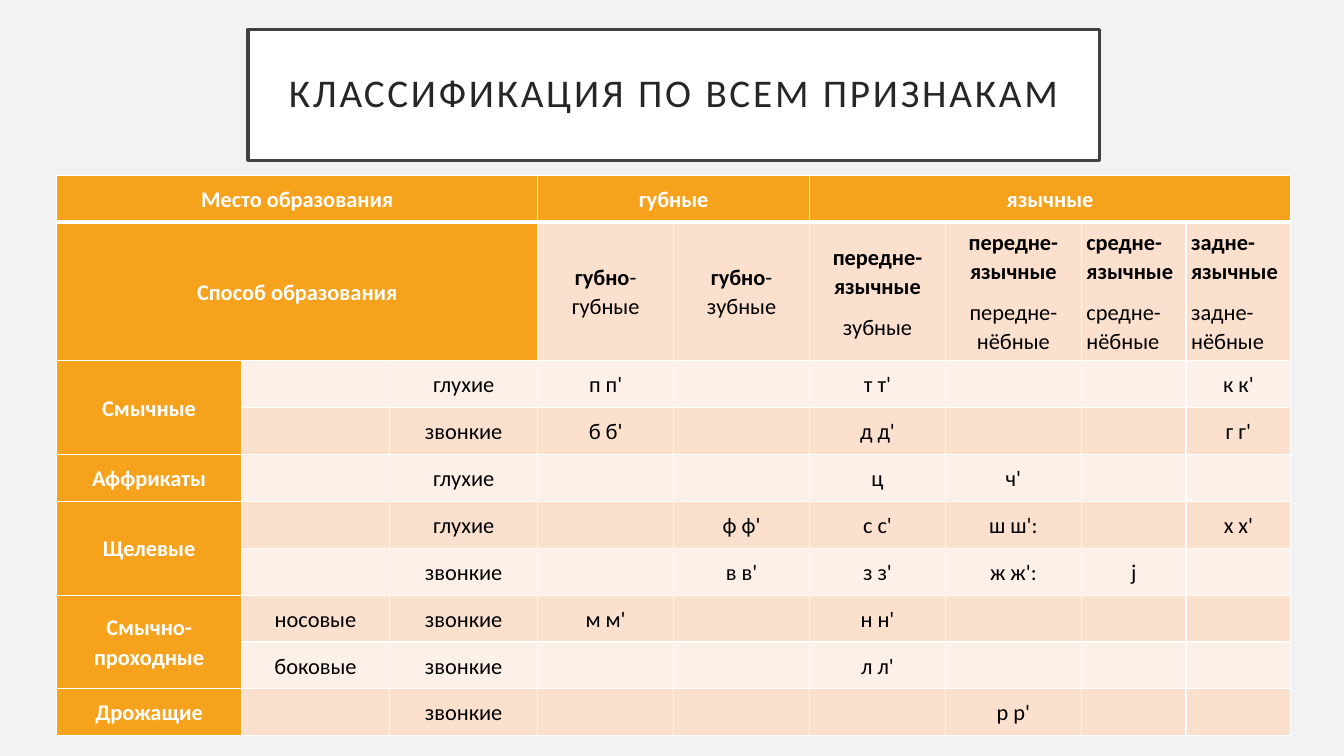
from dataclasses import dataclass
from typing import Any

from lxml.etree import SubElement
from pptx import Presentation
from pptx.dml.color import RGBColor
from pptx.enum.text import MSO_ANCHOR, MSO_AUTO_SIZE, PP_ALIGN
from pptx.oxml.ns import qn
from pptx.slide import Slide
from pptx.table import Table, _Cell
from pptx.util import Pt


@dataclass(frozen=True)
class Theme:
    font: str = "Calibri"
    title_size: float = 28
    cell_size: float = 16
    page: str = "F2F2F2"
    white: str = "FFFFFF"
    frame: str = "404040"
    title: str = "262626"
    text: str = "000000"
    accent: str = "F6A21D"
    bands: tuple[str, str] = ("FDF0E8", "FBE0CD")


@dataclass(frozen=True)
class Span:
    text: str
    bold: bool = False


@dataclass(frozen=True)
class Heading:
    row: int
    column: int
    text: str
    rows: int = 1
    columns: int = 1


@dataclass(frozen=True)
class Place:
    paragraphs: tuple[tuple[Span, ...], ...]
    align: PP_ALIGN = PP_ALIGN.CENTER


THEME = Theme()
COLUMN_WIDTHS = [132] + [105.8] * 2 + [97.1] * 4 + [74.8] * 2
ROW_HEIGHTS = [33.4, 90] + [33.5] * 8
FIRST_PLACE_COLUMN = 3
FIRST_SOUND_ROW = 2

HEADINGS = [
    Heading(0, 0, "Место образования", columns=3),
    Heading(0, 3, "губные", columns=2),
    Heading(0, 5, "язычные", columns=4),
    Heading(1, 0, "Способ образования", columns=3),
    Heading(2, 0, "Смычные", rows=2),
    Heading(4, 0, "Аффрикаты"),
    Heading(5, 0, "Щелевые", rows=2),
    Heading(7, 0, "Смычно-проходные", rows=2),
    Heading(9, 0, "Дрожащие"),
]


def stacked(group: str, detail: str, align: PP_ALIGN = PP_ALIGN.CENTER) -> Place:
    return Place(((Span(group, True),), (Span(detail),)), align)


PLACES = [
    Place(((Span("губно", True), Span("-губные")),)),
    Place(((Span("губно", True), Span("-зубные")),)),
    stacked("передне-язычные", "зубные"),
    stacked("передне-язычные", "передне-нёбные"),
    stacked("средне-язычные", "средне-нёбные", PP_ALIGN.LEFT),
    stacked("задне-язычные", "задне-нёбные", PP_ALIGN.LEFT),
]

SOUNDS = [
    ("", "глухие", "п п'", "", "т т'", "", "", "к к'"),
    ("", "звонкие", "б б'", "", "д д'", "", "", "г г'"),
    ("", "глухие", "", "", "ц", "ч'", "", ""),
    ("", "глухие", "", "ф ф'", "с с'", "ш ш':", "", "х х'"),
    ("", "звонкие", "", "в в'", "з з'", "ж ж':", "j", ""),
    ("носовые", "звонкие", "м м'", "", "н н'", "", "", ""),
    ("боковые", "звонкие", "", "", "л л'", "", "", ""),
    ("", "звонкие", "", "", "", "р р'", "", ""),
]


def apply(target: Any, **values: Any) -> None:
    for name, value in values.items():
        setattr(target, name, value)


def paint(fill: Any, color: str) -> None:
    fill.solid()
    fill.fore_color.rgb = RGBColor.from_string(color)


def write_span(para: Any, span: Span, size: float, color: str) -> Any:
    run = para.add_run()
    run.text = span.text
    apply(run.font, name=THEME.font, size=Pt(size), bold=span.bold)
    run.font.color.rgb = RGBColor.from_string(color)
    return run


def add_title(page: Slide, text: str) -> None:
    box = page.shapes.title
    apply(box, left=Pt(177.1), top=Pt(20.9), width=Pt(608.4), height=Pt(93.6))
    paint(box.fill, THEME.white)
    paint(box.line.fill, THEME.frame)
    box.line.width = Pt(2.5)
    box.shadow.inherit = False
    frame = box.text_frame
    margin = Pt(14.4)
    apply(frame, word_wrap=True, auto_size=MSO_AUTO_SIZE.NONE,
          vertical_anchor=MSO_ANCHOR.MIDDLE, margin_left=margin,
          margin_right=margin, margin_top=margin, margin_bottom=margin)
    para = frame.paragraphs[0]
    apply(para, alignment=PP_ALIGN.CENTER, line_spacing=0.9)
    run = write_span(para, Span(text), THEME.title_size, THEME.title)
    run._r.get_or_add_rPr().set("spc", "200")


def add_borders(cell: _Cell, row: int) -> None:
    properties = cell._tc.get_or_add_tcPr()
    for side in "LRTB":
        heavy = (row, side) in ((0, "B"), (1, "T"))
        border = SubElement(properties, qn(f"a:ln{side}"), w=str(Pt(3 if heavy else 1)))
        fill = SubElement(border, qn("a:solidFill"))
        SubElement(fill, qn("a:srgbClr"), val=THEME.white)


def fill_cell(cell: _Cell, place: Place, color: str) -> None:
    for index, spans in enumerate(place.paragraphs):
        frame = cell.text_frame
        para = frame.add_paragraph() if index else frame.paragraphs[0]
        apply(para, alignment=place.align, line_spacing=1.07, space_after=Pt(8))
        for span in spans:
            write_span(para, span, THEME.cell_size, color)


def format_cells(table: Table) -> None:
    margin = Pt(3.6)
    for row in range(len(ROW_HEIGHTS)):
        for column in range(len(COLUMN_WIDTHS)):
            cell = table.cell(row, column)
            apply(cell, vertical_anchor=MSO_ANCHOR.MIDDLE, margin_left=margin,
                  margin_right=margin, margin_top=margin, margin_bottom=margin)
            add_borders(cell, row)
            paint(cell.fill, THEME.bands[row % 2])


def add_table(page: Slide) -> None:
    table = page.shapes.add_table(
        len(ROW_HEIGHTS), len(COLUMN_WIDTHS), Pt(40.5), Pt(125.4),
        Pt(sum(COLUMN_WIDTHS)), Pt(sum(ROW_HEIGHTS))).table
    apply(table, first_row=False, horz_banding=False)
    for column, width in zip(table.columns, COLUMN_WIDTHS):
        column.width = Pt(width)
    for row, height in zip(table.rows, ROW_HEIGHTS):
        row.height = Pt(height)
    format_cells(table)
    for heading in HEADINGS:
        cell = table.cell(heading.row, heading.column)
        last = table.cell(heading.row + heading.rows - 1,
                          heading.column + heading.columns - 1)
        if heading.rows * heading.columns > 1:
            cell.merge(last)
        paint(cell.fill, THEME.accent)
        fill_cell(cell, Place(((Span(heading.text, True),),)), THEME.white)
    for column, place in enumerate(PLACES, FIRST_PLACE_COLUMN):
        fill_cell(table.cell(1, column), place, THEME.text)
    for row, sounds in enumerate(SOUNDS, FIRST_SOUND_ROW):
        for column, sound in enumerate(sounds, 1):
            if sound:
                fill_cell(table.cell(row, column), Place(((Span(sound),),)), THEME.text)


def main() -> None:
    deck = Presentation()
    apply(deck, slide_width=Pt(960), slide_height=Pt(540))
    page = deck.slides.add_slide(deck.slide_layouts[5])
    paint(page.background.fill, THEME.page)
    add_title(page, "КЛАССИФИКАЦИЯ ПО ВСЕМ ПРИЗНАКАМ")
    add_table(page)
    deck.save("out.pptx")


if __name__ == "__main__":
    main()
